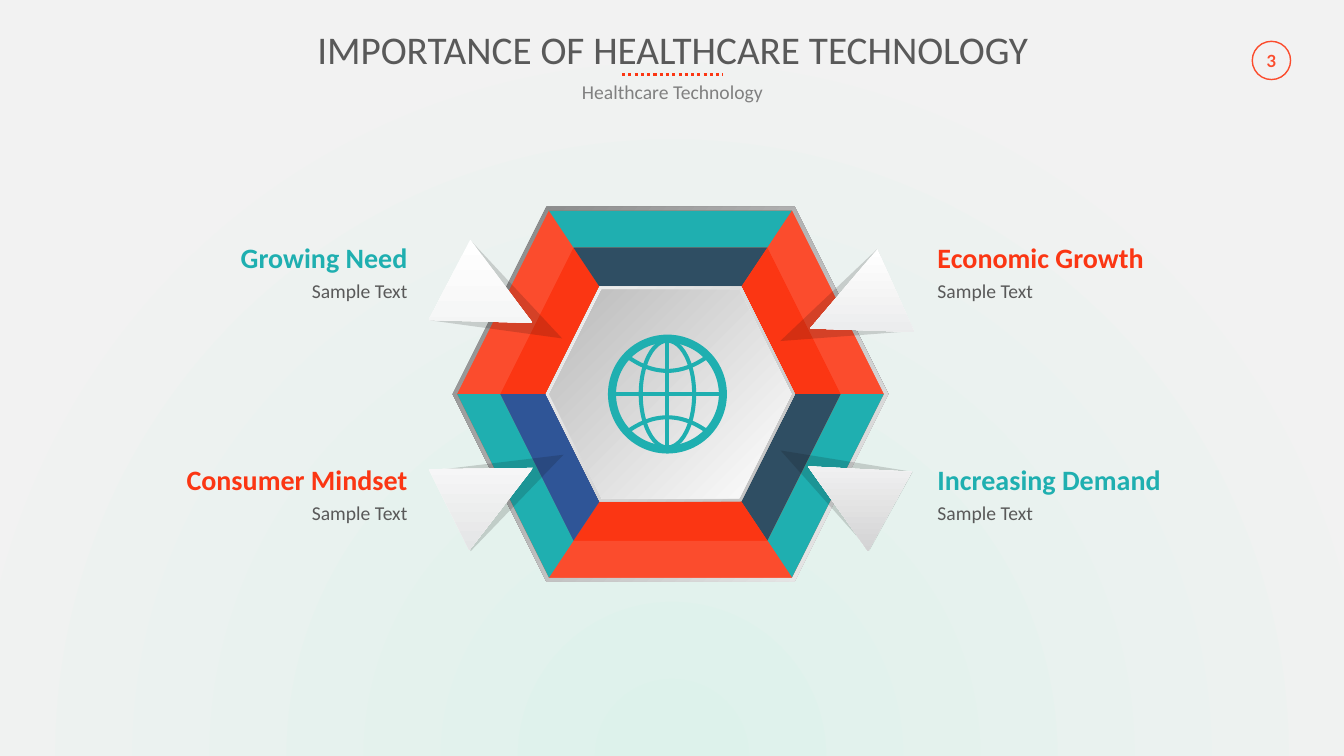
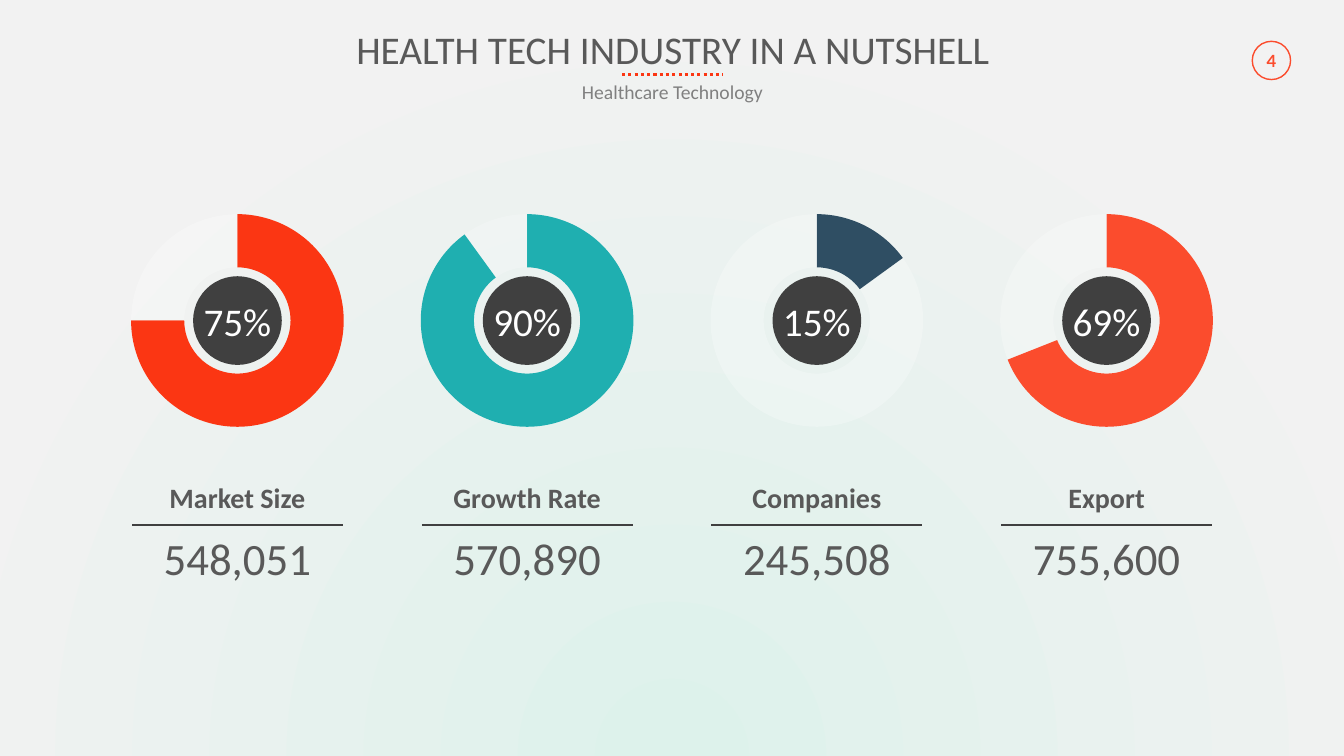
from lxml import etree
from pptx import Presentation
from pptx.chart.data import CategoryChartData
from pptx.dml.color import RGBColor
from pptx.enum.chart import XL_CHART_TYPE
from pptx.enum.dml import MSO_LINE
from pptx.enum.shapes import MSO_CONNECTOR, MSO_SHAPE
from pptx.enum.text import MSO_ANCHOR, MSO_AUTO_SIZE, PP_ALIGN
from pptx.oxml.ns import qn
from pptx.util import Inches, Pt

LEFT, CENTER, RIGHT = PP_ALIGN.LEFT, PP_ALIGN.CENTER, PP_ALIGN.RIGHT
HEXAGON, OVAL, TRIANGLE = MSO_SHAPE.HEXAGON, MSO_SHAPE.OVAL, MSO_SHAPE.ISOSCELES_TRIANGLE
DOUGHNUT = XL_CHART_TYPE.DOUGHNUT
STRAIGHT = MSO_CONNECTOR.STRAIGHT
DOTS = MSO_LINE.ROUND_DOT

FONT = "Calibri"
COLORS = {
    "mint": "DDF2EB", "pale": "F2F2F2", "white": "FFFFFF", "silver": "BFBFBF",
    "steel": "BABABA", "gray": "808080", "text": "595959", "dark": "404040",
    "black": "0D0D0D", "red": "FB3613", "coral": "FB4C2D", "teal": "1FAFB0",
    "navy": "2F4E63", "blue": "2F5597", "tip1": "F0F1F1", "tip2": "E2E3E4",
    "tip3": "E4E5E6", "tip4": "D3D3D4",
}
OUTER_RING = ["coral", "teal", "coral", "teal", "coral", "teal"]
INNER_RING = ["red", "navy", "red", "navy", "red", "blue"]
RING_SIZES = [(4.23, 3.64), (3.38, 2.91), (2.47, 2.13)]
POINTERS = [
    ((1.64, 0.86), (1.77, 0.94), 298.8, "tip4"),
    ((1.66, -0.78), (1.81, -0.84), 246.1, "tip2"),
    ((-1.62, 0.88), (-1.78, 0.94), 63.5, "tip3"),
    ((-1.63, -0.84), (-1.78, -0.92), 117.4, "tip1"),
]
LABELS = [
    (9.2, 2.34, "Economic Growth", "red", LEFT),
    (9.2, 4.54, "Increasing Demand", "teal", LEFT),
    (0.6, 2.34, "Growing Need", "teal", RIGHT),
    (0.6, 4.54, "Consumer Mindset", "red", RIGHT),
]
METRICS = [
    ("Market Size", 75, "548,051", "red", 25),
    ("Growth Rate", 90, "570,890", "teal", 21),
    ("Companies", 15, "245,508", "navy", 25),
    ("Export", 69, "755,600", "coral", 25),
]


def rgb(name):
    return RGBColor.from_string(COLORS[name])


def inches(*values):
    return [Inches(v) for v in values]


def blend(fill, start, end, angle):
    fill.gradient()
    for stop, name in zip(fill.gradient_stops, (start, end)):
        stop.color.rgb = rgb(name)
    fill.gradient_angle = (360 - angle) % 360


def fade(clr, percent):
    etree.SubElement(clr, qn("a:alpha")).set("val", str(percent * 1000))


def paint(sp, fill=None, line=None, width=1):
    sp.shadow.inherit = False
    if fill:
        sp.fill.solid()
        sp.fill.fore_color.rgb = rgb(fill)
    else:
        sp.fill.background()
    if line:
        sp.line.color.rgb = rgb(line)
        sp.line.width = Pt(width)
    else:
        sp.line.fill.background()
    return sp


def centered(s, kind, cx, cy, w, h, **style):
    sp = s.shapes.add_shape(kind, *inches(cx - w / 2, cy - h / 2, w, h))
    return paint(sp, **style)


def outline(s, points, close=True):
    points = [inches(*point) for point in points]
    builder = s.shapes.build_freeform(*points[0])
    builder.add_line_segments(points[1:], close=close)
    return builder.convert_to_shape()


def rule(s, x1, y1, x2, y2, color, width):
    line = s.shapes.add_connector(STRAIGHT, *inches(x1, y1, x2, y2))
    line.line.color.rgb = rgb(color)
    line.line.width = Pt(width)
    etree.SubElement(line.element.spPr, qn("a:effectLst"))
    return line


def write(sp, text, size, color, align=CENTER, bold=False, font=FONT):
    p = sp.text_frame.paragraphs[0]
    p.text = text
    p.alignment = align
    p.font.name = font
    p.font.size = Pt(size)
    p.font.bold = bold
    p.font.color.rgb = rgb(color)


def textbox(s, box, *args, **style):
    sp = s.shapes.add_textbox(*inches(*box))
    sp.text_frame.word_wrap = True
    write(sp, *args, **style)


def badge_text(sp, *args, **style):
    tf = sp.text_frame
    tf.margin_left = tf.margin_right = tf.margin_top = tf.margin_bottom = 0
    tf.vertical_anchor = MSO_ANCHOR.MIDDLE
    tf.word_wrap = False
    write(sp, *args, **style)


def set_background(master):
    blend(master.background.fill, "mint", "pale", 0)
    grad = master.element.xpath(".//p:bgPr/a:gradFill")[0]
    grad.remove(grad.find(qn("a:lin")))
    shade = etree.SubElement(grad, qn("a:path"))
    shade.set("path", "circle")
    focus = etree.SubElement(shade, qn("a:fillToRect"))
    for side, value in zip("ltrb", (50000, 130000, 50000, -30000)):
        focus.set(side, str(value))


def add_slide(prs, title, number):
    s = prs.slides.add_slide(prs.slide_layouts[5])
    sp = s.shapes.title
    sp.left, sp.top, sp.width, sp.height = inches(2.27, 0.2, 8.8, 0.57)
    sp.text_frame.auto_size = MSO_AUTO_SIZE.NONE
    sp.text_frame.vertical_anchor = MSO_ANCHOR.MIDDLE
    write(sp, title, 28, "text")
    textbox(s, (2.93, 0.74, 7.48, 0.34), "Healthcare Technology", 14, "gray")
    rule(s, 6.17, 0.74, 7.17, 0.74, "red", 2.25).line.dash_style = DOTS
    badge = centered(s, OVAL, 12.61, 0.6, 0.38, 0.38, line="coral")
    badge_text(badge, number, 12, "coral", bold=True, font="Lato")
    return s


def hexagon_points(cx, cy, w, h):
    half, flat = w / 2, w / 2 - h / 4
    return [(cx - half, cy), (cx - flat, cy - h / 2), (cx + flat, cy - h / 2),
            (cx + half, cy), (cx + flat, cy + h / 2), (cx - flat, cy + h / 2)]


def add_ring(s, cx, cy, outer_size, inner_size, colors):
    outer = hexagon_points(cx, cy, *outer_size)
    inner = hexagon_points(cx, cy, *inner_size)
    for i, color in enumerate(colors):
        j = (i + 1) % 6
        paint(outline(s, [outer[i], outer[j], inner[j], inner[i]]), color)


def add_plate(s, cx, cy, w, h, start, end, angle):
    blend(centered(s, HEXAGON, cx, cy, w, h).fill, start, end, angle)


def add_pointer(s, cx, cy, shadow, tip, rotation, end):
    sp = centered(s, TRIANGLE, cx + shadow[0], cy + shadow[1], 0.89, 1.25, fill="black")
    sp.rotation = rotation
    fade(sp.element.spPr.xpath(".//a:srgbClr")[0], 16)
    sp = centered(s, TRIANGLE, cx + tip[0], cy + tip[1], 0.9, 0.93)
    sp.rotation = rotation
    blend(sp.fill, "white", end, 90)
    sp.element.spPr.find(qn("a:gradFill")).set("rotWithShape", "0")


def add_globe(s, cx, cy, radius):
    thin = {"line": "teal", "width": 2.9}
    centered(s, OVAL, cx, cy, 0.53, 2 * radius - 0.04, **thin)
    rule(s, cx - radius, cy, cx + radius, cy, "teal", 2.9)
    rule(s, cx, cy - radius, cx, cy + radius, "teal", 2.9)
    steps = [i / 10 for i in range(-10, 11)]
    for side in (-1, 1):
        arc = [(cx + 0.38 * t, cy + side * (0.23 + 0.13 * t * t)) for t in steps]
        paint(outline(s, arc, close=False), **thin)
    centered(s, OVAL, cx, cy, 2 * radius, 2 * radius, line="teal", width=5.75)


def add_hexagon(s, cx, cy):
    add_plate(s, cx, cy, 4.32, 3.72, "gray", "pale", 45)
    centered(s, HEXAGON, cx, cy, *RING_SIZES[0], fill="coral")
    add_ring(s, cx, cy, RING_SIZES[1], RING_SIZES[2], INNER_RING)
    add_ring(s, cx, cy, RING_SIZES[0], RING_SIZES[1], OUTER_RING)
    add_plate(s, cx, cy, *RING_SIZES[2], "silver", "pale", 225)
    add_plate(s, cx, cy, 2.4, 2.07, "white", "steel", 225)
    for pointer in POINTERS:
        add_pointer(s, cx, cy, *pointer)
    add_globe(s, cx - 0.03, cy, 0.55)


def add_label(s, x, y, heading, color, align):
    textbox(s, (x, y, 3.54, 0.44), heading, 20, color, align, bold=True)
    textbox(s, (x, y + 0.38, 3.54, 0.34), "Sample Text", 14, "text", align)


def add_doughnut(s, x, y, w, h, percent, color, opacity):
    data = CategoryChartData()
    data.categories = ["1", "2"]
    data.add_series("Series 1", (percent, 100 - percent))
    chart = s.shapes.add_chart(DOUGHNUT, *inches(x, y, w, h), data).chart
    chart.has_title = chart.has_legend = False
    chart.font.name = FONT
    chart.font.size = Pt(10)
    plot = chart.plots[0]
    plot.vary_by_categories = True
    for i, name in enumerate((color, "white")):
        point = plot.series[0].points[i]
        point.format.fill.solid()
        point.format.fill.fore_color.rgb = rgb(name)
        point.format.line.fill.background()
    ring = plot.series[0]._element.getparent()
    fade(ring.xpath(".//c:dPt[c:idx/@val='1']//a:srgbClr")[0], opacity)
    ring.find(qn("c:holeSize")).set("val", "84")
    area = ring.getparent()
    for old in area.findall(qn("c:layout")):
        area.remove(old)
    layout = etree.Element(qn("c:layout"))
    area.insert(0, layout)
    manual = etree.SubElement(layout, qn("c:manualLayout"))
    size = 2.11
    settings = [("layoutTarget", "inner"), ("xMode", "edge"), ("yMode", "edge"),
                ("x", (1 - size / w) / 2), ("y", (1 - size / h) / 2),
                ("w", size / w), ("h", size / h)]
    for tag, value in settings:
        etree.SubElement(manual, qn("c:" + tag)).set("val", str(value))


def add_metric(s, x, y, w, heading, percent, value, color, opacity):
    h = 2.38
    add_doughnut(s, x, y, w, h, percent, color, opacity)
    disc = centered(s, OVAL, x + w / 2, y + h / 2, 0.88, 0.88, fill="dark")
    badge_text(disc, f"{percent}%", 28, "white")
    textbox(s, (x, y + 2.73, w, 0.44), heading, 20, "text", bold=True)
    rule(s, x + 0.21, y + 3.22, x + w - 0.21, y + 3.22, "dark", 1)
    textbox(s, (x, y + 3.23, w, 0.64), value, 32, "text")


def importance_slide(prs):
    s = add_slide(prs, "IMPORTANCE OF HEALTHCARE TECHNOLOGY", "3")
    for label in LABELS:
        add_label(s, *label)
    add_hexagon(s, 6.65, 3.91)


def nutshell_slide(prs):
    s = add_slide(prs, "HEALTH TECH INDUSTRY IN A NUTSHELL", "4")
    left, last = 1.1, 9.72
    pitch = (last - left) / (len(METRICS) - 1)
    for i, metric in enumerate(METRICS):
        add_metric(s, left + i * pitch, 1.99, 2.51, *metric)


def main():
    prs = Presentation()
    prs.slide_width, prs.slide_height = inches(13.33, 7.5)
    set_background(prs.slide_master)
    importance_slide(prs)
    nutshell_slide(prs)
    prs.save("out.pptx")


if __name__ == "__main__":
    main()
